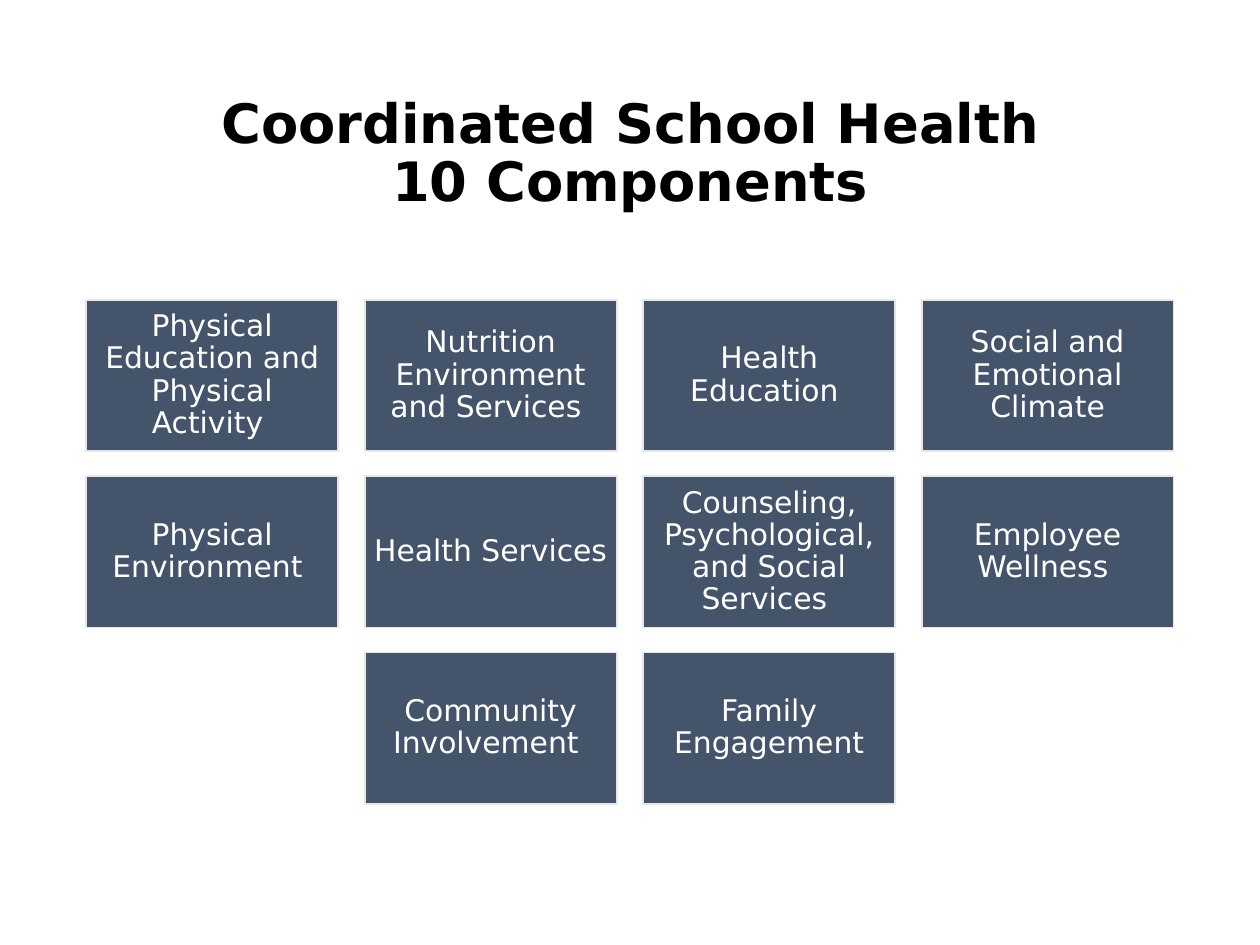
from pptx import Presentation
from pptx.dml.color import RGBColor
from pptx.enum.shapes import MSO_SHAPE as SHAPE
from pptx.enum.text import MSO_ANCHOR as ANCHOR, PP_ALIGN as ALIGN
from pptx.util import Inches, Pt

COLORS = {"box": "44546A", "border": "E7E6E6", "title": "000000", "label": "FFFFFF"}
FONT = "DejaVu Sans"
SLIDE_W, SLIDE_H = 10, 7.5

# Component grid; the trailing spaces belong to the labels
BOX_W, BOX_H = 2, 1.2
GAP_X, GAP_Y = 0.21, 0.2
GRID_TOP = 2.38
COMPONENT_ROWS = [
    ["Physical Education and Physical Activity ", "Nutrition Environment and Services ",
     "Health Education ", "Social and Emotional Climate"],
    ["Physical Environment ", "Health Services ",
     "Counseling, Psychological, and Social Services ", "Employee Wellness "],
    ["Community Involvement ", "Family Engagement"],
]


class SlideBuilder:
    def __init__(self, prs):
        self.s = prs.slides.add_slide(prs.slide_layouts[5])

    def color(self, name):
        return RGBColor.from_string(COLORS[name])

    def set_text(self, sp, lines, size, color, bold=False, inset=None):
        tf = sp.text_frame
        frame = {"word_wrap": True, "vertical_anchor": ANCHOR.MIDDLE}
        if inset is not None:
            sides = ("left", "top", "right", "bottom")
            frame.update({f"margin_{side}": Inches(inset) for side in sides})
        for name, value in frame.items():
            setattr(tf, name, value)
        p = tf.paragraphs[0]
        p.alignment, p.line_spacing = ALIGN.CENTER, 0.9
        for i, line in enumerate(lines):
            if i:
                p.add_line_break()
            r = p.add_run()
            r.text = line
            for name, value in {"name": FONT, "size": Pt(size), "bold": bold}.items():
                setattr(r.font, name, value)
            r.font.color.rgb = self.color(color)

    def title(self, lines, left, top, width, height):
        sp = self.s.shapes.title
        place = {"left": left, "top": top, "width": width, "height": height}
        for name, value in place.items():
            setattr(sp, name, Inches(value))
        self.set_text(sp, lines, 31, "title", bold=True)

    def box(self, label, left, top):
        sp = self.s.shapes.add_shape(SHAPE.RECTANGLE, Inches(left), Inches(top),
                                     Inches(BOX_W), Inches(BOX_H))
        sp.shadow.inherit = False
        sp.fill.solid()
        sp.fill.fore_color.rgb = self.color("box")
        sp.line.color.rgb = self.color("border")
        sp.line.width = Pt(1)
        self.set_text(sp, [label], 17, "label", inset=0.07)


def main():
    prs = Presentation()
    prs.slide_width, prs.slide_height = Inches(SLIDE_W), Inches(SLIDE_H)
    slide = SlideBuilder(prs)

    # Title
    slide.title(["Coordinated School Health", "10 Components"], 0.69, 0.61, 8.62, 1.24)

    # Component boxes, each row centred on the slide
    for row, labels in enumerate(COMPONENT_ROWS):
        row_w = len(labels) * (BOX_W + GAP_X) - GAP_X
        for col, label in enumerate(labels):
            slide.box(label, (SLIDE_W - row_w) / 2 + col * (BOX_W + GAP_X),
                      GRID_TOP + row * (BOX_H + GAP_Y))

    prs.save("out.pptx")


if __name__ == "__main__":
    main()
